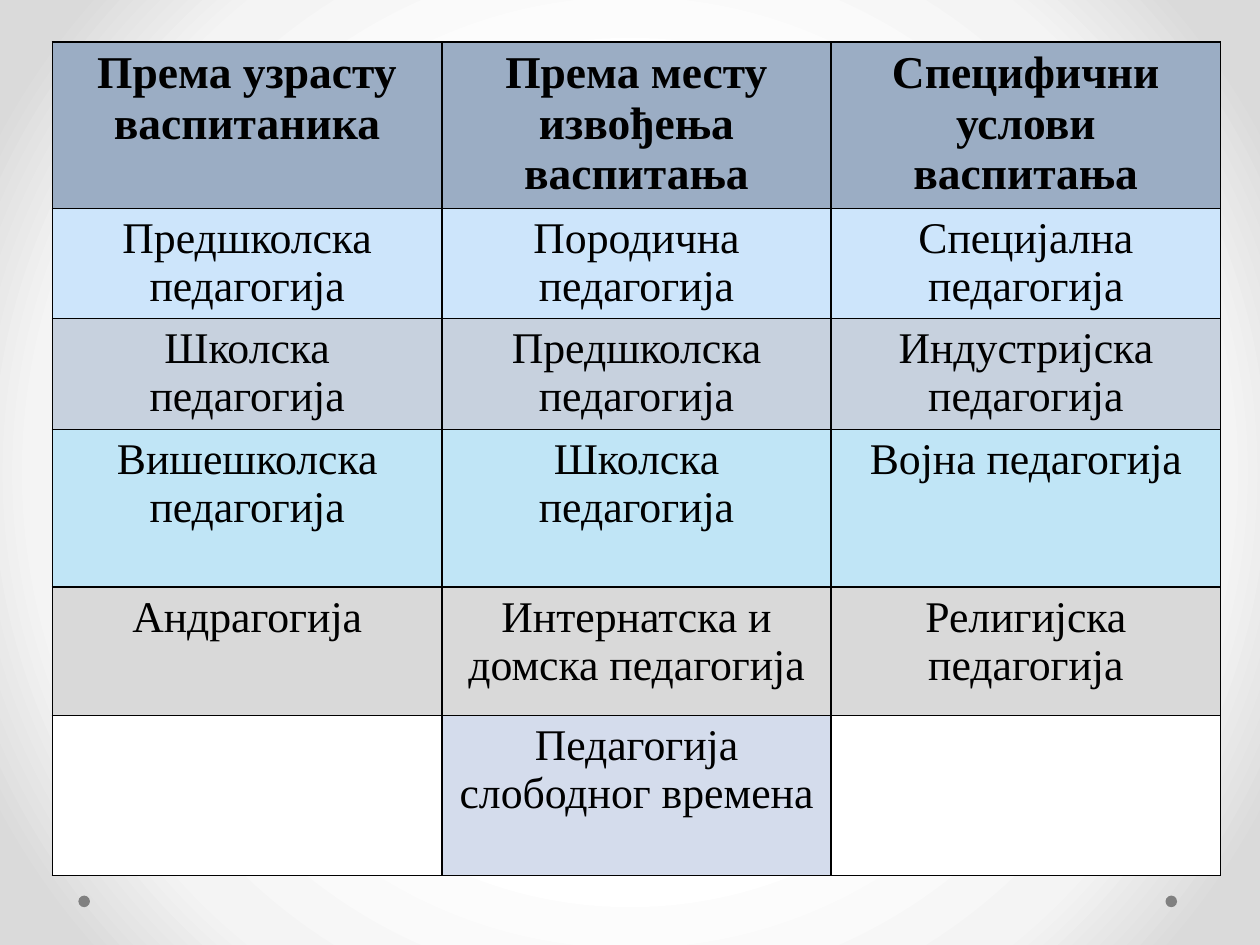
from pptx import Presentation
from pptx.dml.color import RGBColor
from pptx.enum.shapes import MSO_SHAPE
from pptx.enum.text import PP_ALIGN
from pptx.oxml import parse_xml
from pptx.oxml.ns import nsdecls, qn
from pptx.util import Pt

OVAL = MSO_SHAPE.OVAL
MID = PP_ALIGN.CENTER
BLACK = RGBColor(0x00, 0x00, 0x00)
WHITE = RGBColor(0xFF, 0xFF, 0xFF)
GRAY = RGBColor(0x80, 0x80, 0x80)
STEEL = RGBColor(0x9B, 0xAD, 0xC4)
SKY = RGBColor(0xCD, 0xE5, 0xFB)
SLATE = RGBColor(0xC7, 0xD1, 0xDE)
AQUA = RGBColor(0xC0, 0xE5, 0xF6)
SILVER = RGBColor(0xD9, 0xD9, 0xD9)
LILAC = RGBColor(0xD4, 0xDC, 0xEC)
PALE = RGBColor(0xF4, 0xF4, 0xF4)
EDGE = RGBColor(0xDA, 0xDA, 0xDA)

ROWS = [
    (95, STEEL, ["Према узрасту васпитаника", "Према месту извођења васпитања",
                 "Специфични услови васпитања"]),
    (63, SKY, ["Предшколска педагогија", "Породична педагогија",
               "Специјална педагогија"]),
    (63.4, SLATE, ["Школска педагогија", "Предшколска педагогија",
                   "Индустријска педагогија"]),
    (90, AQUA, ["Вишешколска педагогија", "Школска педагогија",
                "Војна педагогија"]),
    (73.4, SILVER, ["Андрагогија", "Интернатска и домска педагогија",
                    "Религијска педагогија"]),
    (91.6, LILAC, ["", "Педагогија слободног времена", ""]),
]
HEAD = {"name": "Times New Roman", "size": Pt(26), "bold": True}
BODY = {"name": "Times New Roman", "size": Pt(25), "bold": False}

deck = Presentation()
deck.slide_width, deck.slide_height = Pt(720), Pt(540)
slide = deck.slides.add_slide(deck.slide_layouts[6])

slide.background.fill.gradient()
grad = slide.element.find(".//" + qn("a:gradFill"))
stops = "".join(
    f'<a:gs pos="{pos * 1000}"><a:srgbClr val="{tone}"/></a:gs>'
    for pos, tone in [(50, WHITE), (76, PALE), (92, EDGE)])
grad.getparent().replace(grad, parse_xml(
    f'<a:gradFill {nsdecls("a")} rotWithShape="1"><a:gsLst>{stops}</a:gsLst>'
    '<a:path path="circle"><a:fillToRect l="50000" t="50000" r="50000" b="50000"/>'
    '</a:path></a:gradFill>'))

for left in (666, 44.8):
    dot = slide.shapes.add_shape(OVAL, Pt(left), Pt(511.8), Pt(6.6), Pt(6.6))
    dot.shadow.inherit = False
    dot.fill.solid()
    dot.fill.fore_color.rgb = GRAY
    dot.line.fill.background()

total = sum(row[0] for row in ROWS)
table = slide.shapes.add_table(
    len(ROWS), 3, Pt(30), Pt(24), Pt(667.5), Pt(total)).table
for col in table.columns:
    col.width = Pt(222.5)

for r, (high, tint, words) in enumerate(ROWS):
    table.rows[r].height = Pt(high)
    for c, text in enumerate(words):
        cell = table.cell(r, c)
        props = cell._tc.get_or_add_tcPr()
        for side in "LRTB":
            props.append(parse_xml(
                f'<a:ln{side} {nsdecls("a")} w="12700"><a:solidFill>'
                f'<a:srgbClr val="{BLACK}"/></a:solidFill></a:ln{side}>'))
        cell.fill.solid()
        cell.fill.fore_color.rgb = tint if text else WHITE
        if text:
            para = cell.text_frame.paragraphs[0]
            para.alignment = MID
            run = para.add_run()
            run.text = text
            for key, value in (BODY if r else HEAD).items():
                setattr(run.font, key, value)
            run.font.color.rgb = BLACK

deck.save("out.pptx")
